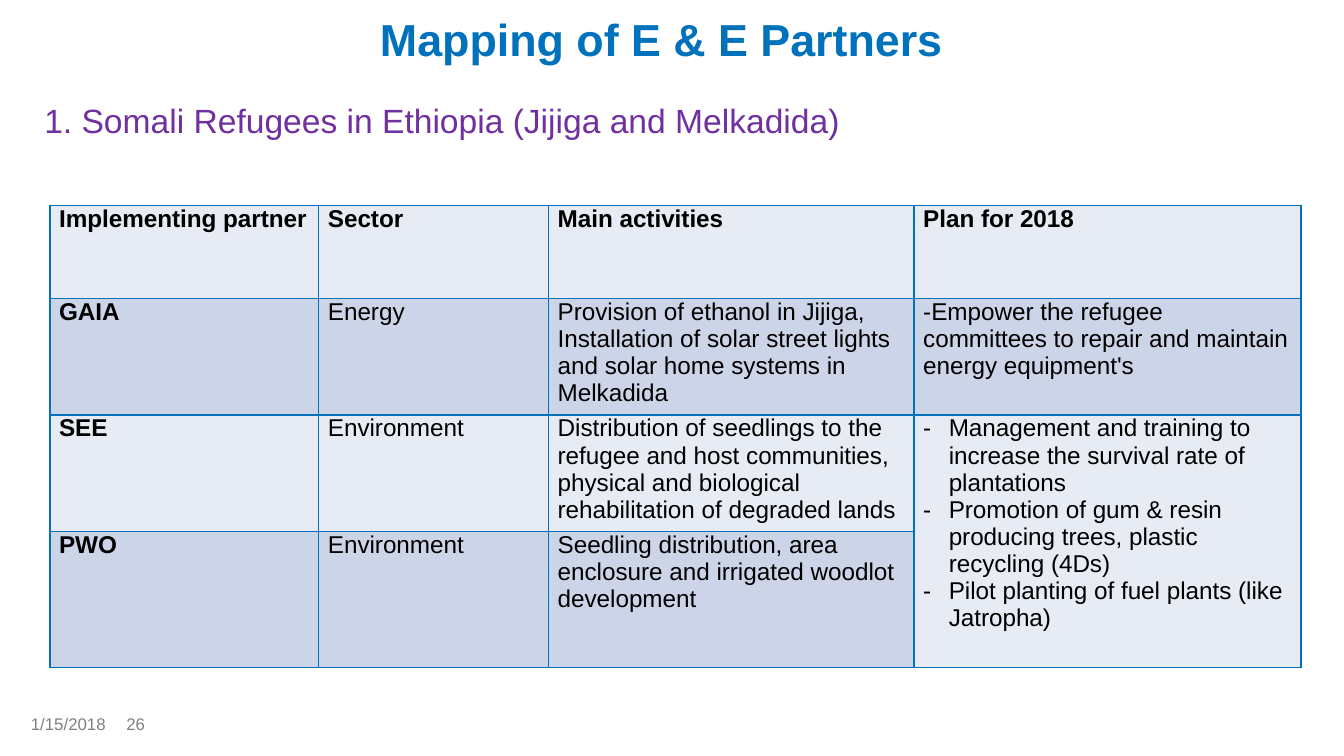
from dataclasses import dataclass

from lxml import etree
from pptx import Presentation
from pptx import util as u
from pptx.dml.color import RGBColor
from pptx.enum import text
from pptx.oxml.ns import qn


@dataclass(frozen=True)
class Theme:
    font: str = "Arial"
    blue: str = "0072BC"
    purple: str = "7030A0"
    grey: str = "808080"
    black: str = "000000"
    bands: tuple = ("E7EBF3", "CCD5E7")
    title_size: int = 24
    heading_size: int = 18
    table_size: int = 13
    footer_size: int = 9
    border: int = 1


class SlideBuilder:
    def __init__(self, page, theme):
        self.page = page
        self.theme = theme

    def add_span(self, para, words, size, color, bold=False):
        span = para.add_run()
        span.text = words
        span.font.name = self.theme.font
        span.font.size = u.Pt(size)
        span.font.bold = bold
        span.font.color.rgb = RGBColor.from_string(color)

    def add_text(self, words, place, size, color, bold=False,
                 align=text.PP_ALIGN.LEFT, anchor=text.MSO_ANCHOR.TOP, spacing=1.0):
        box = self.page.shapes.add_textbox(*map(u.Inches, place))
        frame = box.text_frame
        frame.word_wrap = True
        frame.vertical_anchor = anchor
        frame.margin_left = frame.margin_right = 0
        frame.margin_top = frame.margin_bottom = 0
        para = frame.paragraphs[0]
        para.alignment = align
        para.line_spacing = spacing
        self.add_span(para, words, size, color, bold)

    def add_dash(self, para, indent):
        properties = para._p.get_or_add_pPr()
        properties.set("marL", str(u.Inches(indent)))
        properties.set("indent", str(-u.Inches(indent)))
        etree.SubElement(properties, qn("a:buFont"), typeface=self.theme.font)
        etree.SubElement(properties, qn("a:buChar"), char="-")

    def add_borders(self, cell):
        properties = cell._tc.get_or_add_tcPr()
        for index, side in enumerate(("lnL", "lnR", "lnT", "lnB")):
            line = etree.Element(qn(f"a:{side}"), w=str(u.Pt(self.theme.border)))
            fill = etree.SubElement(line, qn("a:solidFill"))
            etree.SubElement(fill, qn("a:srgbClr"), val=self.theme.blue)
            properties.insert(index, line)

    def fill_cell(self, cell, content, band, bold):
        cell.fill.solid()
        cell.fill.fore_color.rgb = RGBColor.from_string(band)
        self.add_borders(cell)
        cell.margin_left = cell.margin_right = u.Inches(0.07)
        cell.margin_top = cell.margin_bottom = 0
        dashed = isinstance(content, list)
        for index, words in enumerate(content if dashed else [content]):
            frame = cell.text_frame
            para = frame.add_paragraph() if index else frame.paragraphs[0]
            if dashed:
                self.add_dash(para, 0.19)
            if words:
                self.add_span(para, words, self.theme.table_size, self.theme.black, bold)

    def add_table(self, rows, left, top, widths, heights):
        place = map(u.Inches, (left, top, sum(widths), sum(heights)))
        table = self.page.shapes.add_table(len(rows), len(widths), *place).table
        for column, width in zip(table.columns, widths):
            column.width = u.Inches(width)
        for r, (contents, height) in enumerate(zip(rows, heights)):
            table.rows[r].height = u.Inches(height)
            for c, content in enumerate(contents):
                band = self.theme.bands[r % 2]
                self.fill_cell(table.cell(r, c), content, band, r == 0 or c == 0)
        return table


PARTNERS = [
    ["Implementing partner", "Sector", "Main activities", "Plan for 2018"],
    ["GAIA", "Energy",
     "Provision of ethanol in Jijiga, Installation of solar street lights "
     "and solar home systems in Melkadida",
     "-Empower the refugee committees to repair and maintain energy equipment's"],
    ["SEE", "Environment",
     "Distribution of seedlings to the refugee and host communities, "
     "physical and biological rehabilitation of degraded lands",
     ["Management and training to increase the survival rate of plantations",
      "Promotion of gum & resin producing trees, plastic recycling (4Ds)",
      "Pilot planting of fuel plants (like Jatropha)"]],
    ["PWO", "Environment",
     "Seedling distribution, area enclosure and irrigated woodlot development", ""],
]


def main():
    # Widescreen page, 16 to 9
    deck = Presentation()
    deck.slide_width = u.Inches(10)
    deck.slide_height = u.Inches(10 * 9 / 16)
    theme = Theme()
    builder = SlideBuilder(deck.slides.add_slide(deck.slide_layouts[6]), theme)

    # Title and heading
    builder.add_text("Mapping of E & E Partners", (0.23, 0, 9.38, 0.49),
                     theme.title_size, theme.blue, bold=True,
                     align=text.PP_ALIGN.CENTER, anchor=text.MSO_ANCHOR.BOTTOM,
                     spacing=0.9)
    builder.add_text("1. Somali Refugees in Ethiopia (Jijiga and Melkadida)",
                     (0.33, 0.74, 9.37, 0.4), theme.heading_size, theme.purple)

    # Partner table, with one plan shared by the last two partners
    table = builder.add_table(PARTNERS, 0.37, 1.53, (2, 1.71, 2.72, 2.88),
                              (0.69, 0.69, 0.69, 1.01))
    table.cell(2, 3).merge(table.cell(3, 3))

    # Footer: date and page number
    for words, left, width in (("1/15/2018", 0.23, 0.71), ("26", 0.94, 0.5)):
        builder.add_text(words, (left, 5.31, width, 0.17),
                         theme.footer_size, theme.grey)

    deck.save("out.pptx")


if __name__ == "__main__":
    main()
